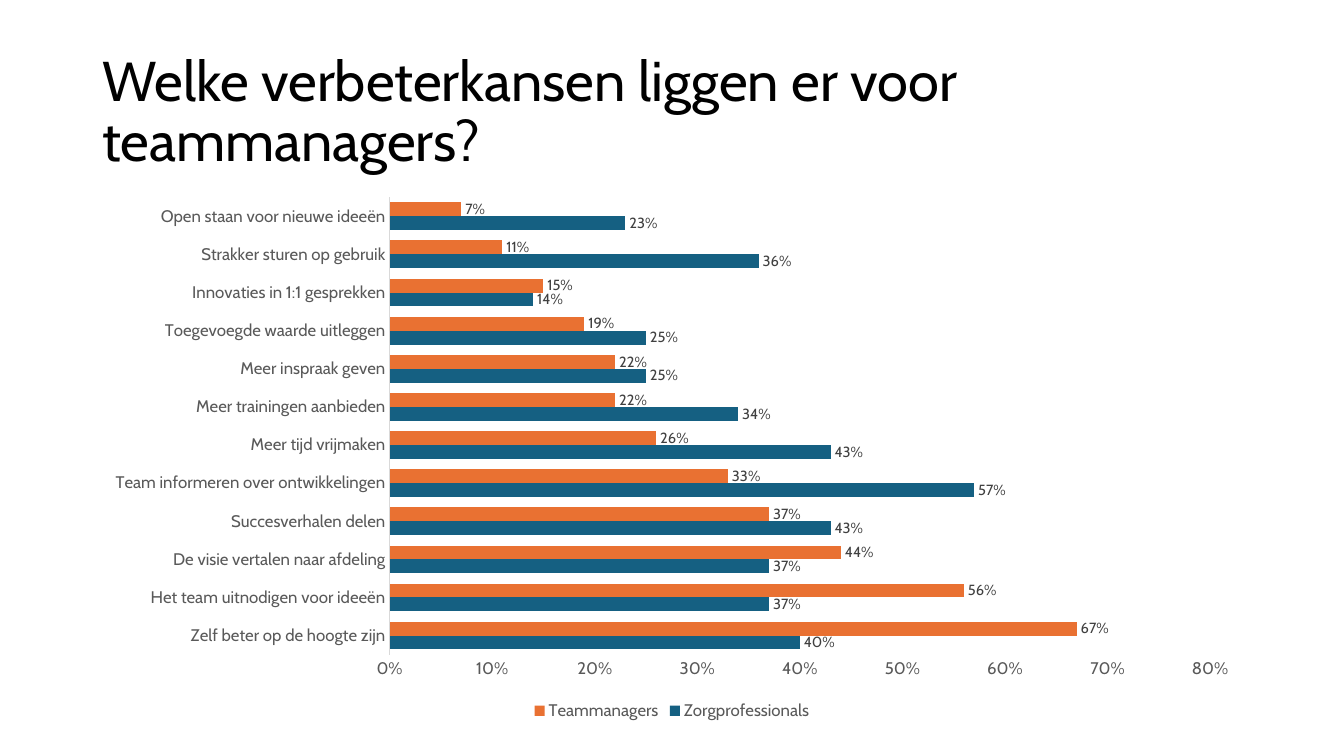
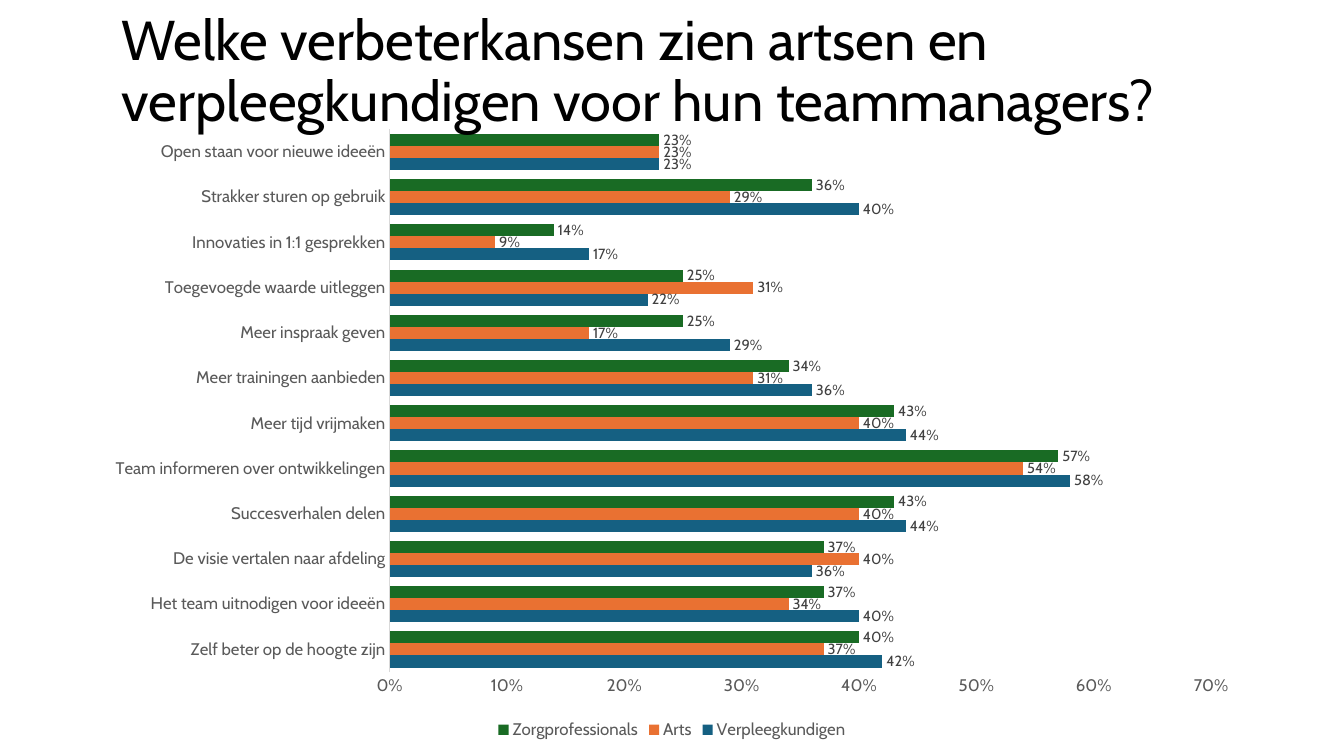
from pptx import Presentation
from pptx.chart.data import CategoryChartData
from pptx.dml.color import RGBColor
from pptx.enum.chart import (XL_CHART_TYPE as CHART, XL_LABEL_POSITION as LABEL,
                             XL_LEGEND_POSITION as LEGEND, XL_TICK_MARK as TICK)
from pptx.enum.text import MSO_ANCHOR
from pptx.util import Pt

# Shared style
FONT = "Cabin"
BLACK = RGBColor(0x00, 0x00, 0x00)
LABEL_GREY = RGBColor(0x40, 0x40, 0x40)
AXIS_GREY = RGBColor(0x59, 0x59, 0x59)
LINE_GREY = RGBColor(0xD9, 0xD9, 0xD9)
BLUE = RGBColor(0x15, 0x60, 0x82)
ORANGE = RGBColor(0xE9, 0x71, 0x32)
GREEN = RGBColor(0x19, 0x6B, 0x24)
SERIES_COLORS = (BLUE, ORANGE, GREEN)
CHART_LEFT, CHART_WIDTH = 66, 828
TITLE_WIDTH, TITLE_HEIGHT = 865.5, 104.4

# Survey results in percent, from the bottom category up
CATEGORIES = (
    "Zelf beter op de hoogte zijn",
    "Het team uitnodigen voor ideeën",
    "De visie vertalen naar afdeling",
    "Succesverhalen delen",
    "Team informeren over ontwikkelingen",
    "Meer tijd vrijmaken",
    "Meer trainingen aanbieden",
    "Meer inspraak geven",
    "Toegevoegde waarde uitleggen",
    "Innovaties in 1:1 gesprekken",
    "Strakker sturen op gebruik",
    "Open staan voor nieuwe ideeën",
)
RESULTS = {
    "Zorgprofessionals": (40, 37, 37, 43, 57, 43, 34, 25, 25, 14, 36, 23),
    "Teammanagers": (67, 56, 44, 37, 33, 26, 22, 22, 19, 15, 11, 7),
    "Verpleegkundigen": (42, 40, 36, 44, 58, 44, 36, 29, 22, 17, 40, 23),
    "Arts": (37, 34, 40, 40, 54, 40, 31, 17, 31, 9, 29, 23),
}


def set_font(font, size, color):
    font.name = FONT
    font.size = Pt(size)
    font.color.rgb = color


def add_title(slide, text, left, top):
    box = slide.shapes.add_textbox(Pt(left), Pt(top), Pt(TITLE_WIDTH), Pt(TITLE_HEIGHT))
    tf = box.text_frame
    tf.word_wrap = True
    tf.vertical_anchor = MSO_ANCHOR.MIDDLE
    p = tf.paragraphs[0]
    p.text = text
    p.line_spacing = 0.9
    set_font(p.runs[0].font, 40, BLACK)


def style_axis(axis):
    axis.major_tick_mark = axis.minor_tick_mark = TICK.NONE
    axis.has_major_gridlines = False
    set_font(axis.tick_labels.font, 12, AXIS_GREY)


def style_series(series, color):
    series.format.fill.solid()
    series.format.fill.fore_color.rgb = color
    series.invert_if_negative = False
    labels = series.data_labels
    labels.show_value = True
    labels.position = LABEL.OUTSIDE_END
    labels.number_format = "0%"
    labels.number_format_is_linked = False
    set_font(labels.font, 10.5, LABEL_GREY)


def add_bar_chart(slide, groups, top, height, maximum):
    data = CategoryChartData(number_format="0%")
    data.categories = CATEGORIES
    for group in groups:
        data.add_series(group, [value / 100 for value in RESULTS[group]])
    chart = slide.shapes.add_chart(CHART.BAR_CLUSTERED, Pt(CHART_LEFT), Pt(top),
                                   Pt(CHART_WIDTH), Pt(height), data).chart
    chart.has_title = False
    set_font(chart.font, 10, BLACK)

    # Bars
    plot = chart.plots[0]
    plot.gap_width = 75
    plot.overlap = 0
    plot.vary_by_categories = False
    for series, color in zip(plot.series, SERIES_COLORS):
        style_series(series, color)

    # Axes
    cat_axis, val_axis = chart.category_axis, chart.value_axis
    style_axis(cat_axis)
    cat_axis.format.line.color.rgb = LINE_GREY
    cat_axis.format.line.width = Pt(0.75)
    style_axis(val_axis)
    val_axis.format.line.fill.background()
    val_axis.minimum_scale = 0
    val_axis.maximum_scale = maximum
    val_axis.major_unit = 0.1
    val_axis.tick_labels.number_format = "0%"
    val_axis.tick_labels.number_format_is_linked = False

    # Legend
    chart.has_legend = True
    chart.legend.position = LEGEND.BOTTOM
    chart.legend.include_in_layout = False
    set_font(chart.legend.font, 12, AXIS_GREY)


def main():
    prs = Presentation()
    prs.slide_width, prs.slide_height = Pt(960), Pt(540)
    blank = prs.slide_layouts[6]

    # Managers compared with care professionals
    s = prs.slides.add_slide(blank)
    add_title(s, "Welke verbeterkansen liggen er voor teammanagers?", 66, 28.8)
    add_bar_chart(s, ("Zorgprofessionals", "Teammanagers"), 133.2, 384.5, 0.8)

    # Doctors compared with nurses
    s = prs.slides.add_slide(blank)
    add_bar_chart(s, ("Verpleegkundigen", "Arts", "Zorgprofessionals"), 83.5, 447.8, 0.7)
    add_title(s, "Welke verbeterkansen zien artsen en verpleegkundigen "
                 "voor hun teammanagers?", 80, 0)

    prs.save("out.pptx")


if __name__ == "__main__":
    main()
